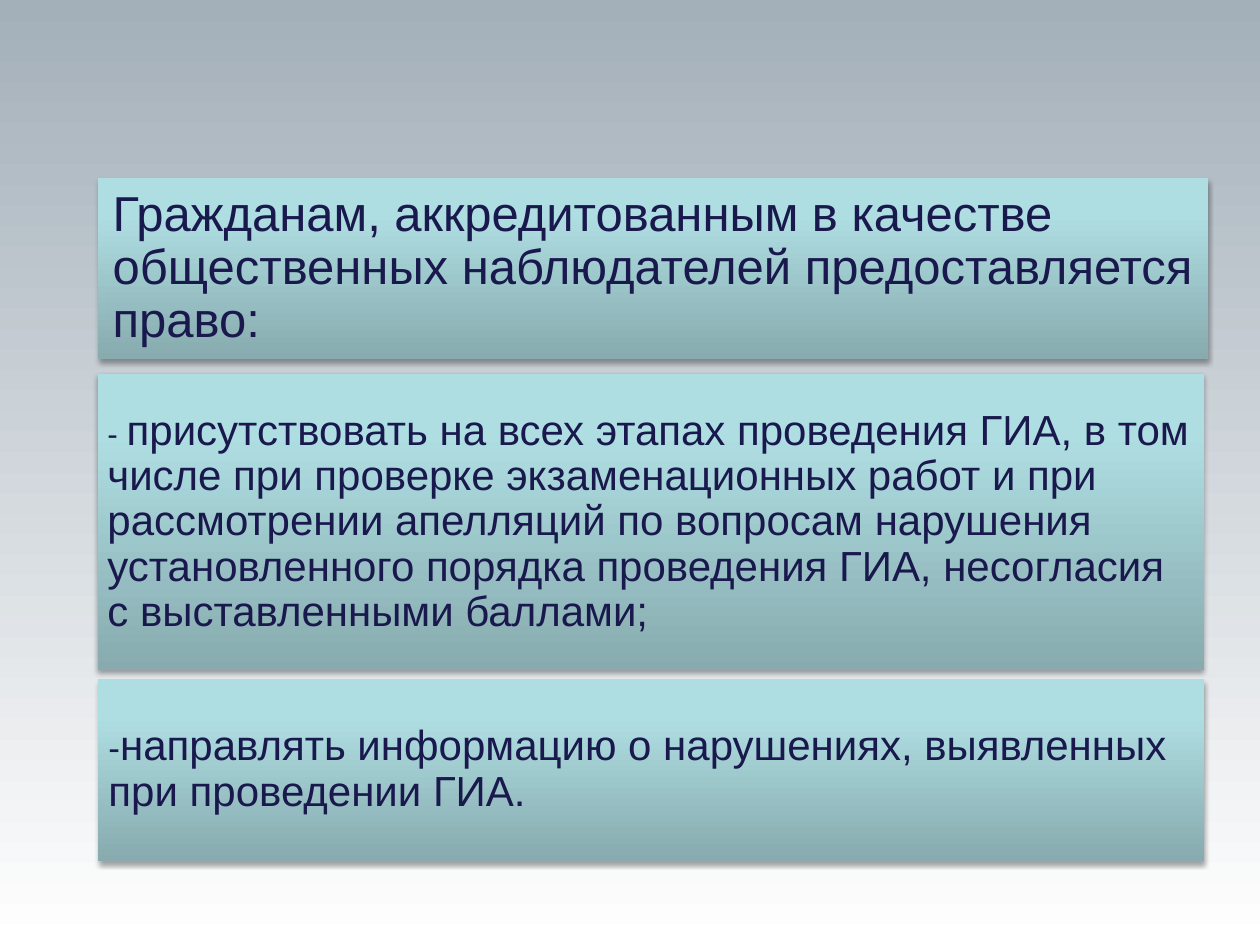
from lxml.etree import SubElement
from pptx import Presentation
from pptx.dml.color import RGBColor
from pptx.enum.shapes import MSO_SHAPE
from pptx.enum.text import MSO_ANCHOR, MSO_AUTO_SIZE, PP_ALIGN
from pptx.oxml.ns import qn
from pptx.util import Pt

COLORS = {
    "page_bottom": "FFFFFF",
    "page_top": "A3AFB9",
    "panel_bottom": "87ABAE",
    "panel_middle": "AFDEE2",
    "panel_top": "AFE0E4",
    "text": "19194D",
    "shadow": "000000",
}
PAGE_STOPS = [(0, "page_bottom"), (100, "page_top")]
PANEL_STOPS = [(0, "panel_bottom"), (80, "panel_middle"), (100, "panel_top")]
LEFT = 56


def add_color(parent, name):
    return SubElement(parent, qn("a:srgbClr"), val=COLORS[name])


def paint_gradient(fill, element, stops):
    """Fill from bottom to top with any number of colour stops."""
    fill.gradient()
    fill.gradient_angle = 90
    stop_list = next(element.iter(qn("a:gsLst")))
    for stop in list(stop_list):
        stop_list.remove(stop)
    for position, name in stops:
        add_color(SubElement(stop_list, qn("a:gs"), pos=str(position * 1000)), name)


def add_soft_shadow(box):
    box.shadow.inherit = False
    effects = box._element.spPr.find(qn("a:effectLst"))
    shadow = SubElement(effects, qn("a:outerShdw"), blurRad=str(Pt(3.1)),
                        dist=str(Pt(1.8)), dir="5400000", rotWithShape="0")
    SubElement(add_color(shadow, "shadow"), qn("a:alpha"), val="35000")


def style_panel(box, top, width, height):
    box.left, box.top = Pt(LEFT), Pt(top)
    box.width, box.height = Pt(width), Pt(height)
    paint_gradient(box.fill, box._element.spPr, PANEL_STOPS)
    box.line.fill.background()
    add_soft_shadow(box)


def write_text(box, spans, inset):
    frame = box.text_frame
    frame.word_wrap = True
    frame.auto_size = MSO_AUTO_SIZE.NONE
    frame.vertical_anchor = MSO_ANCHOR.MIDDLE
    frame.margin_left = frame.margin_right = Pt(inset)
    frame.margin_top = frame.margin_bottom = Pt(inset)
    para = frame.paragraphs[0]
    para.alignment = PP_ALIGN.LEFT
    para.line_spacing = 0.9
    para.space_before = Pt(0)
    for text, size in spans:
        span = para.add_run()
        span.text = text
        span.font.name = "Arial"
        span.font.size = Pt(size)
        span.font.color.rgb = RGBColor.from_string(COLORS["text"])


def add_right(page, top, height, spans, inset):
    box = page.shapes.add_shape(MSO_SHAPE.RECTANGLE, 0, 0, 0, 0)
    style_panel(box, top, 632, height)
    write_text(box, spans, inset)


def main():
    deck = Presentation()
    deck.slide_width, deck.slide_height = Pt(720), Pt(540)
    page = deck.slides.add_slide(deck.slide_layouts[5])
    paint_gradient(page.background.fill, page._element, PAGE_STOPS)

    # Heading panel
    title = page.shapes.title
    style_panel(title, 101.5, 634.5, 103.7)
    write_text(title, [("Гражданам, аккредитованным в качестве общественных "
                        "наблюдателей предоставляется право:", 28)], 8.4)

    # Rights of the observers
    add_right(page, 213.8, 169.2, [
        ("- ", 18),
        ("присутствовать на всех этапах проведения ГИА, в том числе при проверке "
         "экзаменационных работ и при рассмотрении апелляций по вопросам нарушения "
         "установленного порядка проведения ГИА, несогласия с выставленными баллами;", 24),
    ], 5.4)
    add_right(page, 388.1, 103.7, [
        ("-", 20),
        ("направлять информацию о нарушениях, выявленных при проведении ГИА.", 24),
    ], 6)

    deck.save("out.pptx")


if __name__ == "__main__":
    main()
